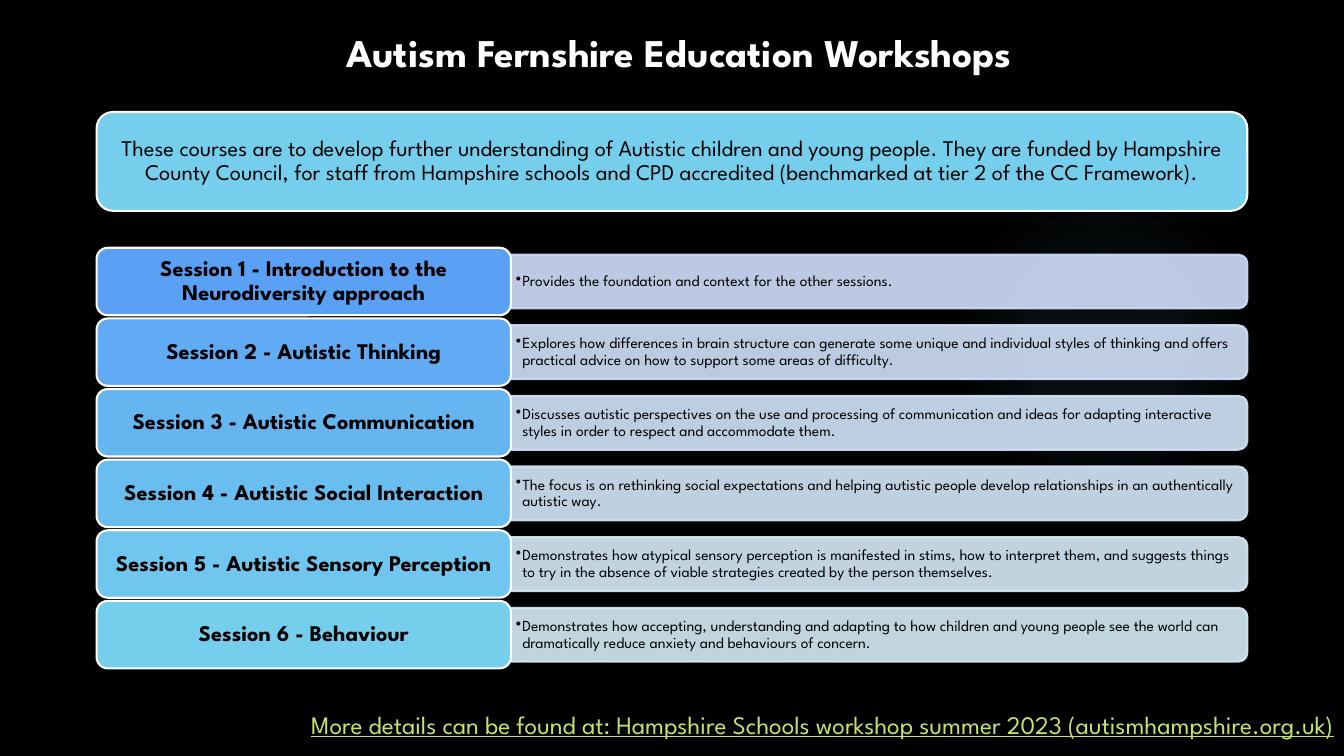
from lxml.etree import SubElement
from pptx import Presentation
from pptx.dml.color import RGBColor
from pptx.enum.shapes import MSO_SHAPE
from pptx.enum.text import MSO_ANCHOR, MSO_AUTO_SIZE, PP_ALIGN
from pptx.oxml import parse_xml
from pptx.oxml.ns import nsdecls, qn
from pptx.util import Pt

BLACK, WHITE, SKY = "000000", "FFFFFF", "75CEEC"

SESSIONS = [  # title, card colour, bar colour, description
    ("Session 1 - Introduction to the Neurodiversity approach", "5AA0F5", "D2DFFB",
     "Provides the foundation and context for the other sessions."),
    ("Session 2 - Autistic Thinking", "60ABF3", "D2E2FA",
     "Explores how differences in brain structure can generate some unique and individual "
     "styles of thinking and offers practical advice on how to support some areas of difficulty."),
    ("Session 3 - Autistic Communication", "65B5F1", "D3E5FA",
     "Discusses autistic perspectives on the use and processing of communication and ideas "
     "for adapting interactive styles in order to respect and accommodate them."),
    ("Session 4 - Autistic Social Interaction", "6ABEEF", "D4E8F9",
     "The focus is on rethinking social expectations and helping autistic people develop "
     "relationships in an authentically autistic way."),
    ("Session 5 - Autistic Sensory Perception", "70C6EE", "D5EBF8",
     "Demonstrates how atypical sensory perception is manifested in stims, how to interpret "
     "them, and suggests things to try in the absence of viable strategies created by the "
     "person themselves."),
    ("Session 6 - Behaviour", SKY, "D6EDF8",
     "Demonstrates how accepting, understanding and adapting to how children and young people "
     "see the world can dramatically reduce anxiety and behaviours of concern."),
]


def color(code):
    return RGBColor.from_string(code)


def write(shape, text, size=16, ink=BLACK, bold=False, underline=False, align=PP_ALIGN.CENTER,
          anchor=MSO_ANCHOR.MIDDLE, inset=(5, 2.4), spacing=0.9, bullet=None, grow=False):
    frame = shape.text_frame
    frame.word_wrap = True
    frame.vertical_anchor = anchor
    frame.margin_left = frame.margin_right = Pt(inset[0])
    frame.margin_top = frame.margin_bottom = Pt(inset[1])
    if grow:
        frame.auto_size = MSO_AUTO_SIZE.SHAPE_TO_FIT_TEXT
    para = frame.paragraphs[0]
    para.alignment = align
    para.line_spacing = spacing
    if bullet:
        settings = para._p.get_or_add_pPr()
        settings.set("marL", str(Pt(4.5)))
        settings.set("indent", str(-Pt(4.5)))
        SubElement(settings, qn("a:buChar")).set("char", bullet)
    span = para.add_run()
    span.text = text
    font = span.font
    font.name, font.size, font.bold = Page.FONT, Pt(size), bold
    font.underline = underline
    font.color.rgb = color(ink)


class Page:
    FONT = "League Spartan"
    LINE = 1.5

    def __init__(self, deck):
        self.slide = deck.slides.add_slide(deck.slide_layouts[6])
        fill = self.slide.background.fill
        fill.solid()
        fill.fore_color.rgb = color(BLACK)

    def shape(self, kind, left, top, width, height, fill, line):
        shape = self.slide.shapes.add_shape(kind, Pt(left), Pt(top), Pt(width), Pt(height))
        shape.shadow.inherit = False
        shape.fill.solid()
        shape.fill.fore_color.rgb = color(fill)
        shape.line.color.rgb = color(line)
        shape.line.width = Pt(self.LINE)
        return shape

    def glow(self, left, top, size, tint):
        """Soft circle that fades out from its centre."""
        circle = self.shape(MSO_SHAPE.OVAL, left, top, size, size, tint, tint)
        circle.line.fill.background()
        stops = "".join(
            f'<a:gs pos="{place}000"><a:srgbClr val="{tint}"><a:alpha val="{alpha}000"/>'
            f'</a:srgbClr></a:gs>' for place, alpha in [(0, 7), (36, 6), (69, 0)])
        gradient = parse_xml(
            f'<a:gradFill {nsdecls("a")}><a:gsLst>{stops}</a:gsLst><a:path path="circle">'
            '<a:fillToRect l="50000" t="50000" r="50000" b="50000"/></a:path></a:gradFill>')
        solid = circle._element.spPr.find(qn("a:solidFill"))
        solid.getparent().replace(solid, gradient)

    def card(self, left, top, width, height, fill, text, **style):
        card = self.shape(MSO_SHAPE.ROUNDED_RECTANGLE, left, top, width, height, fill, WHITE)
        write(card, text, **style)

    def bar(self, left, top, width, height, fill):
        """Translucent bar, turned so that its round corners face right."""
        shift = (width - height) / 2
        bar = self.shape(MSO_SHAPE.ROUND_2_SAME_RECTANGLE, left + shift, top - shift,
                         height, width, fill, fill)
        bar.rotation = 90
        for tint in bar._element.spPr.iter(qn("a:srgbClr")):
            SubElement(tint, qn("a:alpha")).set("val", "90000")

    def text(self, left, top, width, height, text, **style):
        box = self.slide.shapes.add_textbox(Pt(left), Pt(top), Pt(width), Pt(height))
        write(box, text, **style)


def main():
    deck = Presentation()
    deck.slide_width, deck.slide_height = Pt(960), Pt(540)
    page = Page(deck)
    page.glow(677.5, 131.8, 221.8, "7AC4F0")

    # Session rows: bar with description, then the title card
    left, first_top, pitch = 69, 177, 50.45
    card_width, card_height = 296, 48.2
    bar_left, bar_width, bar_height = left + card_width, 526, 38.4
    for row, (title, card_fill, bar_fill, description) in enumerate(SESSIONS):
        top = first_top + row * pitch
        bar_top = top + (card_height - bar_height) / 2
        page.bar(bar_left, bar_top, bar_width, bar_height, bar_fill)
        page.text(bar_left, bar_top, bar_width - 2, bar_height, description, size=11,
                  align=PP_ALIGN.LEFT, inset=(3.6, 1.4), bullet="•")
        page.card(left, top, card_width, card_height, card_fill, title, bold=True)

    # Heading, introduction and footer
    plain = {"anchor": MSO_ANCHOR.TOP, "inset": (7.2, 3.6), "spacing": 1, "grow": True}
    page.text(191.5, 16.5, 587, 41, "Autism Fernshire Education Workshops",
              size=28, ink=WHITE, bold=True, **plain)
    page.card(left, 80, 822, 70.6, SKY,
              "These courses are to develop further understanding of Autistic children and young "
              "people. They are funded by Hampshire County Council, for staff from Hampshire "
              "schools and CPD accredited (benchmarked at tier 2 of the CC Framework).",
              inset=(5, 5))
    page.text(27, 503.3, 933, 29,
              "More details can be found at: Hampshire Schools workshop summer 2023 "
              "(autismhampshire.org.uk)",
              size=18, ink="C4E46E", underline=True, align=PP_ALIGN.RIGHT, **plain)

    deck.save("out.pptx")


if __name__ == "__main__":
    main()
